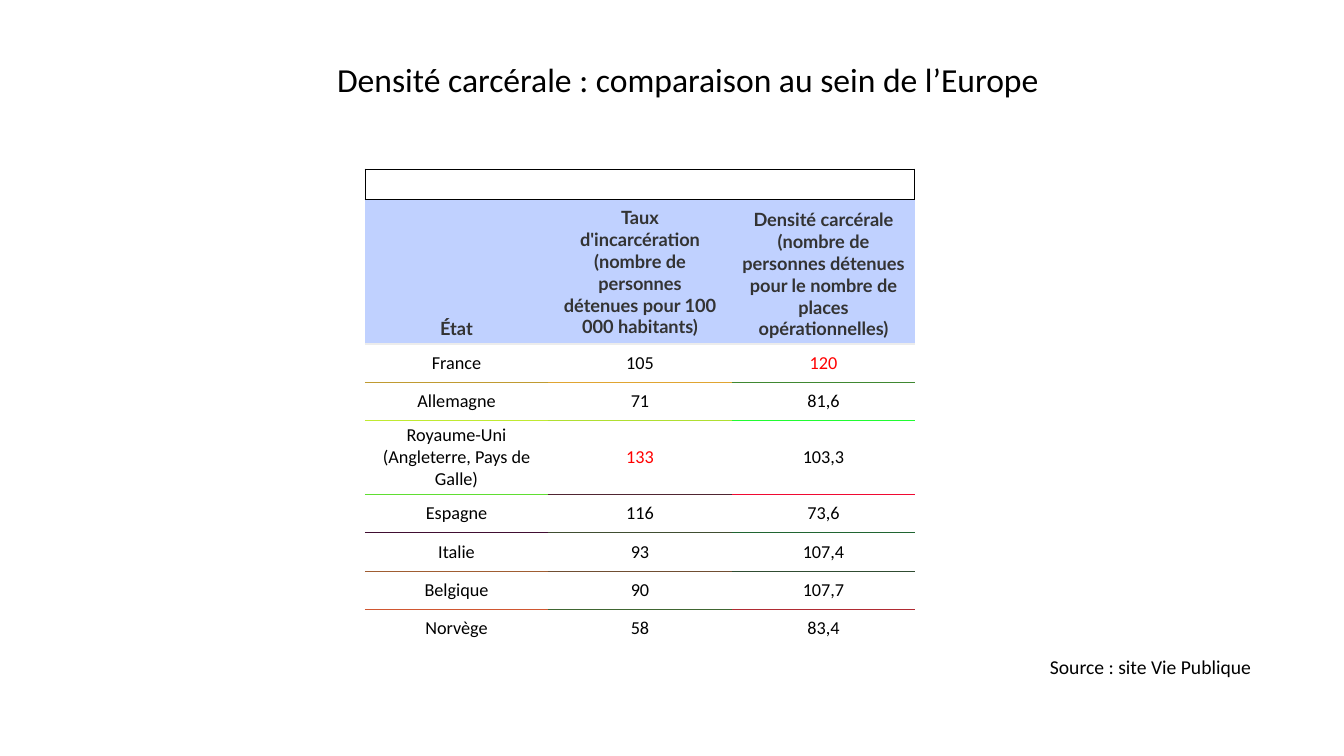
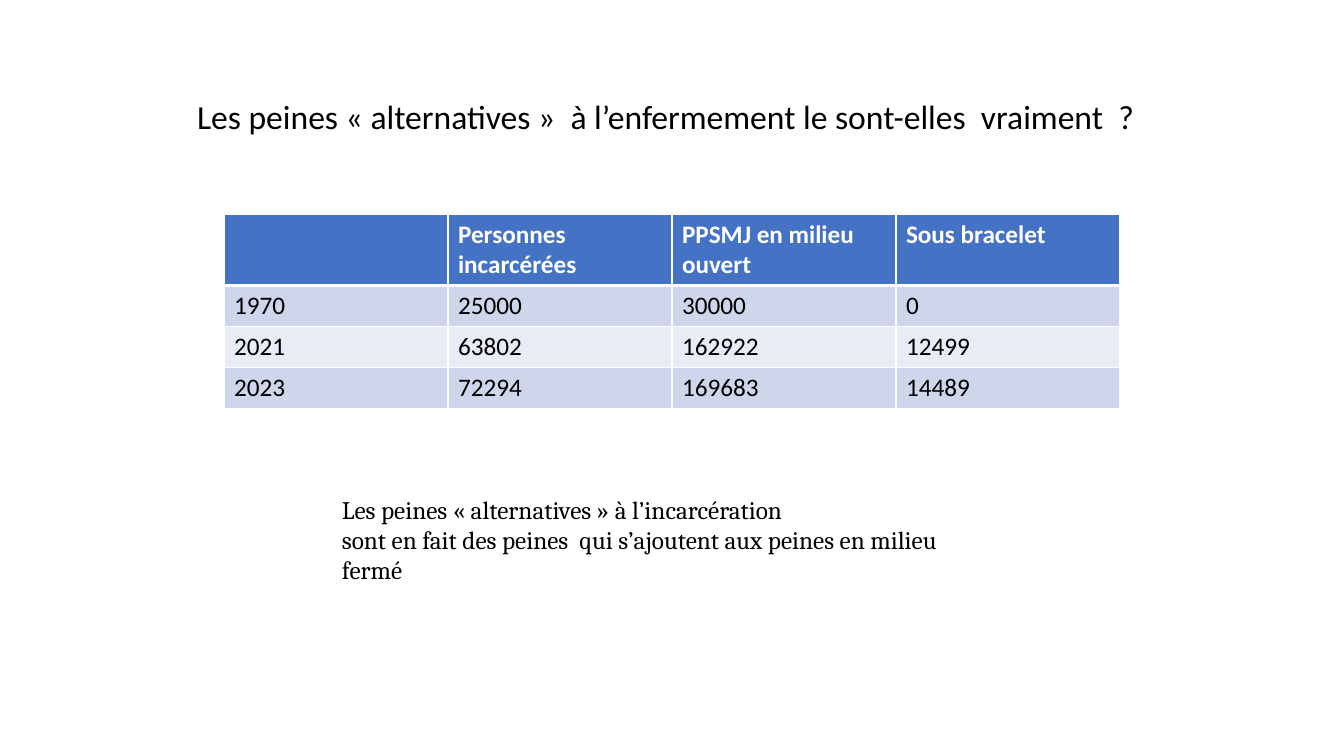
from lxml.etree import SubElement
from pptx import Presentation
from pptx.dml.color import RGBColor
from pptx.enum.text import MSO_ANCHOR, MSO_AUTO_SIZE, PP_ALIGN
from pptx.oxml.ns import qn
from pptx.util import Emu, Pt

PX_PER_INCH = 100.8
BLACK, WHITE, RED = "000000", "FFFFFF", "FF0000"
TITLE_ONLY = 5
NO_STYLE = "{2D5ABB26-0587-4C30-8999-92F81FD0307C}"
BORDER_TAGS = {"left": "a:lnL", "right": "a:lnR", "top": "a:lnT", "bottom": "a:lnB"}

TITLE_FONT = {"name": "Calibri", "size": Pt(24), "bold": False}
SOURCE_FONT = {"name": "Calibri", "size": Pt(14)}
REMARK_FONT = {"name": "Cambria", "size": Pt(18)}
STATE_HEAD_FONT = {"name": "Lato", "size": Pt(13), "bold": True}
STATE_FONT = {"name": "Calibri", "size": Pt(13), "bold": False}
YEAR_HEAD_FONT = {"name": "Calibri", "size": Pt(18), "bold": True}
YEAR_FONT = YEAR_HEAD_FONT | {"bold": False}

STATE_HEADS = [
    "État",
    "Taux d'incarcération (nombre de personnes détenues pour 100 000 habitants)",
    "Densité carcérale (nombre de personnes détenues pour le nombre de places opérationnelles)",
]
# Each state: its values, then the colours of the rules below them
STATES = [
    (["France", "105", "120"], ["C09B32", "E0A532", "408832"]),
    (["Allemagne", "71", "81,6"], ["C0EA32", "B0DF32", "20FD32"]),
    (["Royaume-Uni (Angleterre, Pays de Galle)", "133", "103,3"],
     ["60DE32", "502532", "F00932"]),
    (["Espagne", "116", "73,6"], ["400E32", "404E32", "206532"]),
    (["Italie", "93", "107,4"], ["A05D32", "704E32", "304C32"]),
    (["Belgique", "90", "107,7"], ["D05732", "406632", "B02B33"]),
    (["Norvège", "58", "83,4"], []),
]
HIGHEST = {"120", "133"}
YEARS = [
    ["", "Personnes incarcérées", "PPSMJ en milieu ouvert", "Sous bracelet"],
    ["1970", "25000", "30000", "0"],
    ["2021", "63802", "162922", "12499"],
    ["2023", "72294", "169683", "14489"],
]


def px(length):
    return Emu(round(length * 914400 / PX_PER_INCH))


def rgb(hex_colour):
    return RGBColor.from_string(hex_colour)


def apply(target, values):
    for attribute, value in values.items():
        setattr(target, attribute, value)


def write(frame, lines, font, colour=BLACK, align=PP_ALIGN.LEFT):
    frame.text = "\n".join(lines)
    for paragraph in frame.paragraphs:
        paragraph.alignment = align
        for run in paragraph.runs:
            apply(run.font, font)
            run.font.color.rgb = rgb(colour)


def place_text(shape, box, lines, font):
    apply(shape, dict(zip(("left", "top", "width", "height"), map(px, box))))
    apply(shape.text_frame, {"word_wrap": True, "auto_size": MSO_AUTO_SIZE.NONE,
                             "vertical_anchor": MSO_ANCHOR.TOP})
    write(shape.text_frame, lines, font)


def add_titled_slide(deck, title, box):
    slide = deck.slides.add_slide(deck.slide_layouts[TITLE_ONLY])
    place_text(slide.shapes.title, box, [title], TITLE_FONT)
    return slide


def add_text(slide, box, lines, font):
    place_text(slide.shapes.add_textbox(0, 0, 0, 0), box, lines, font)


def add_plain_table(slide, left, top, column_widths, row_heights):
    """Add a table without any built-in style."""
    table = slide.shapes.add_table(
        len(row_heights), len(column_widths), px(left), px(top),
        px(sum(column_widths)), px(sum(row_heights))).table
    apply(table, {"first_row": False, "horz_banding": False})
    table._tbl.tblPr.find(qn("a:tableStyleId")).text = NO_STYLE
    for column, width in zip(table.columns, column_widths):
        column.width = px(width)
    for row, height in zip(table.rows, row_heights):
        row.height = px(height)
    return table


def set_margins(cell, across, down):
    apply(cell, {"margin_left": px(across), "margin_right": px(across),
                 "margin_top": px(down), "margin_bottom": px(down)})


def set_borders(cell, borders):
    """Draw borders given as side: (colour, width in points)."""
    properties = cell._tc.get_or_add_tcPr()
    sides = [side for side in BORDER_TAGS if side in borders]
    for position, side in enumerate(sides):
        colour, width = borders[side]
        line = SubElement(properties, qn(BORDER_TAGS[side]), w=str(Pt(width)))
        fill = SubElement(line, qn("a:solidFill"))
        SubElement(fill, qn("a:srgbClr"), val=colour)
        properties.insert(position, line)


def fill_cell(cell, colour):
    cell.fill.solid()
    cell.fill.fore_color.rgb = rgb(colour)


def add_state_table(slide):
    heights = [30, 144] + [74 if values[0].startswith("Royaume") else 38
                           for values, _ in STATES]
    table = add_plain_table(slide, 365, 169, [183, 184, 183], heights)

    banner = table.cell(0, 0)
    banner.merge(table.cell(0, 2))
    set_margins(banner, 0, 0)
    set_borders(banner, dict.fromkeys(BORDER_TAGS, (BLACK, 0.75)))

    for column, head in enumerate(STATE_HEADS):
        cell = table.cell(1, column)
        write(cell.text_frame, [head], STATE_HEAD_FONT, "333333", PP_ALIGN.CENTER)
        cell.vertical_anchor = MSO_ANCHOR.BOTTOM
        set_margins(cell, *((12, 6) if column == 1 else (7, 4)))
        fill_cell(cell, "C0D1FF")
        set_borders(cell, {"bottom": ("ECECEC", 1.5)})

    for row, (values, rules) in enumerate(STATES, 2):
        for column, value in enumerate(values):
            cell = table.cell(row, column)
            write(cell.text_frame, [value], STATE_FONT,
                  RED if value in HIGHEST else BLACK, PP_ALIGN.CENTER)
            cell.vertical_anchor = MSO_ANCHOR.MIDDLE
            set_margins(cell, *((12, 8) if column == 1 else (7, 4)))
            if rules:
                set_borders(cell, {"bottom": (rules[column], 0.75)})


def add_year_table(slide):
    table = add_plain_table(slide, 224, 214, [224] * 4, [70] + [41] * 3)
    for row, values in enumerate(YEARS):
        is_head = row == 0
        band = "4472C4" if is_head else ("E9EBF5", "CFD5EA")[row % 2]
        borders = dict.fromkeys(BORDER_TAGS, (WHITE, 1))
        if is_head:
            borders["bottom"] = (WHITE, 3)
        elif row == 1:
            borders["top"] = (WHITE, 3)
        for column, value in enumerate(values):
            cell = table.cell(row, column)
            write(cell.text_frame, [value], YEAR_HEAD_FONT if is_head else YEAR_FONT,
                  WHITE if is_head else BLACK)
            fill_cell(cell, band)
            set_borders(cell, borders)


def main():
    deck = Presentation()
    apply(deck, {"slide_width": px(1344), "slide_height": px(756)})

    density = add_titled_slide(
        deck, "Densité carcérale : comparaison au sein de l’Europe", (327, 54, 740, 50))
    add_state_table(density)
    add_text(density, (1040, 650, 236, 34), ["Source : site Vie Publique"], SOURCE_FONT)

    alternatives = add_titled_slide(
        deck, "Les peines « alternatives »  à l’enfermement le sont-elles  vraiment  ?",
        (187, 91, 980, 50))
    add_year_table(alternatives)
    add_text(alternatives, (332, 489, 672, 72),
             ["Les peines « alternatives » à l’incarcération",
              "sont en fait des peines  qui s’ajoutent aux peines en milieu fermé"],
             REMARK_FONT)

    deck.save("out.pptx")


if __name__ == "__main__":
    main()
